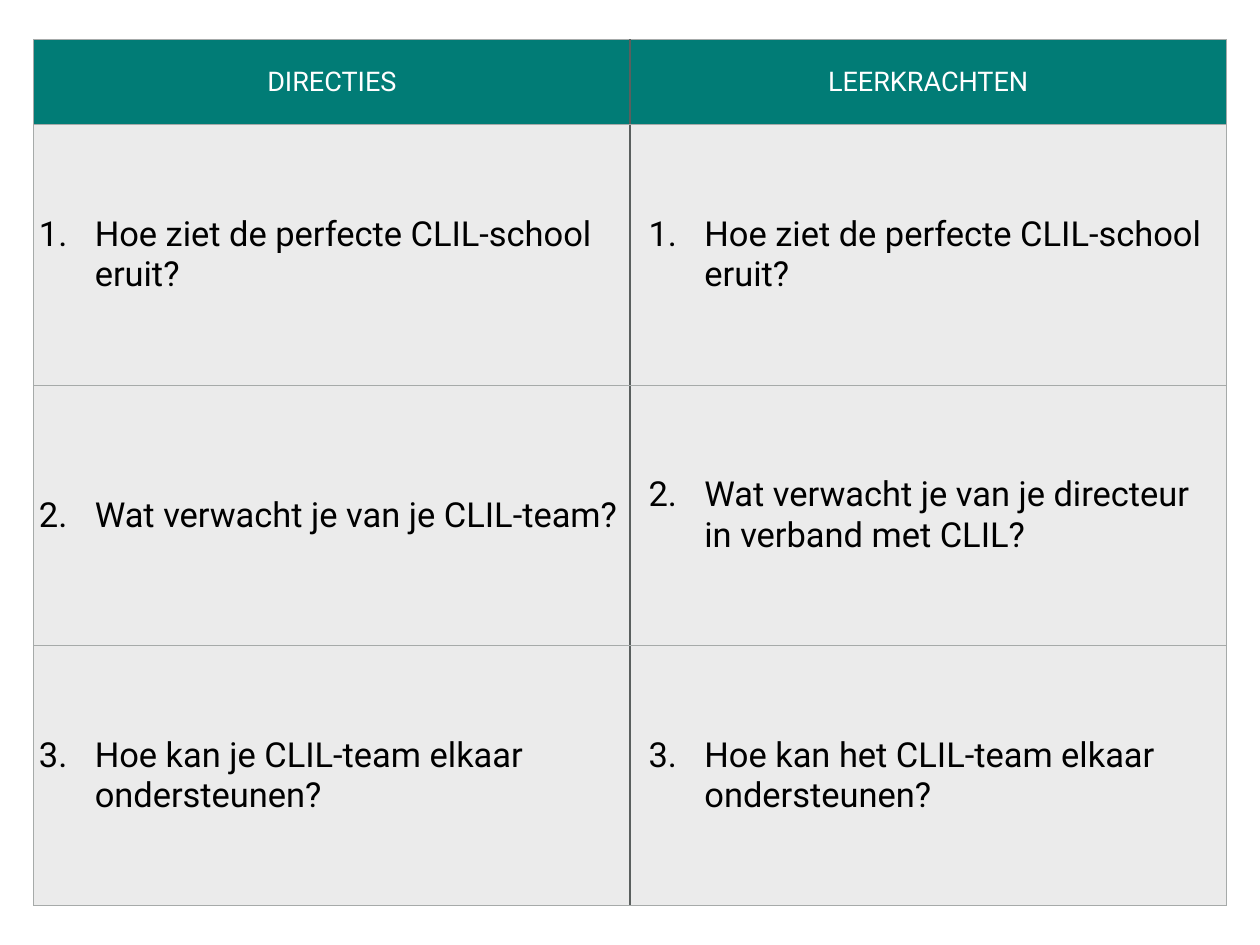
from pptx import Presentation
from pptx.dml.color import RGBColor
from pptx.enum.text import MSO_ANCHOR, PP_ALIGN
from pptx.oxml.ns import qn
from pptx.util import Inches, Pt
from lxml.etree import SubElement

# Content: one column per audience
AUDIENCES = ["DIRECTIES", "LEERKRACHTEN"]
QUESTIONS = [
    ("Hoe ziet de perfecte CLIL-school eruit?",
     "Hoe ziet de perfecte CLIL-school eruit?"),
    ("Wat verwacht je van je CLIL-team?",
     "Wat verwacht je van je directeur in verband met CLIL?"),
    ("Hoe kan je CLIL-team elkaar ondersteunen?",
     "Hoe kan het CLIL-team elkaar ondersteunen?"),
]

TEAL, PALE, WHITE, BLACK = "017C76", "EBEBEB", "FFFFFF", "000000"
EDGE, DIVIDER = "A6AAA9", "5A5F5E"
TEXT_INDENTS = [0.63, 0.78]
HANGING = 0.63


def color(hex_code):
    return RGBColor.from_string(hex_code)


def write(frame, text, size=28, ink=BLACK, align=PP_ALIGN.LEFT,
          number=None, indent=0, before=0):
    """Fill a frame with one paragraph, numbered if a number is given."""
    paragraph = frame.paragraphs[0]
    paragraph.alignment = align
    paragraph.space_before = Pt(before)
    run = paragraph.add_run()
    run.text = text
    run.font.name = "Roboto"
    run.font.size = Pt(size)
    run.font.bold = False
    run.font.color.rgb = color(ink)
    if number:
        properties = paragraph._p.get_or_add_pPr()
        properties.set("marL", str(Inches(indent)))
        properties.set("indent", str(-Inches(HANGING)))
        SubElement(properties, qn("a:buFont"), typeface="Roboto")
        SubElement(properties, qn("a:buAutoNum"), type="arabicPeriod",
                   startAt=str(number))


class QuestionSlide:
    """Holds the slide and draws its elements in one style."""

    def __init__(self, deck):
        self.slide = deck.slides.add_slide(deck.slide_layouts[6])

    def table(self, left, top, widths, heights):
        grid = self.slide.shapes.add_table(
            len(heights), len(widths), Inches(left), Inches(top),
            Inches(sum(widths)), Inches(sum(heights))).table
        grid.horz_banding = False
        for column, width in zip(grid.columns, widths):
            column.width = Inches(width)
        for row, height in zip(grid.rows, heights):
            row.height = Inches(height)
        return grid

    def borders(self, cell, **sides):
        properties = cell._tc.get_or_add_tcPr()
        for side, hex_code in sides.items():
            line = SubElement(properties, qn(f"a:ln{side}"), w=str(Pt(1)))
            fill = SubElement(line, qn("a:solidFill"))
            SubElement(fill, qn("a:srgbClr"), val=hex_code)

    def cell(self, grid, row, column, text, fill, **text_format):
        cell = grid.cell(row, column)
        cell.vertical_anchor = MSO_ANCHOR.MIDDLE
        cell.margin_left = cell.margin_right = Inches(0.06)
        cell.margin_top = cell.margin_bottom = Inches(0.06)
        # Borders precede the fill in the cell properties
        first = column == 0
        self.borders(cell, L=EDGE if first else DIVIDER,
                     R=DIVIDER if first else EDGE, T=EDGE, B=EDGE)
        cell.fill.solid()
        cell.fill.fore_color.rgb = color(fill)
        write(cell.text_frame, text, **text_format)


def main():
    deck = Presentation()
    deck.slide_width, deck.slide_height = Inches(14.22), Inches(10.67)
    page = QuestionSlide(deck)
    overview = page.table(0.38, 0.45, [6.73] * len(AUDIENCES),
                          [0.96] + [2.94] * len(QUESTIONS))

    # Header row
    for column, audience in enumerate(AUDIENCES):
        page.cell(overview, 0, column, audience, TEAL,
                  size=22, ink=WHITE, align=PP_ALIGN.CENTER)

    # Numbered questions
    for number, pair in enumerate(QUESTIONS, start=1):
        for column, question in enumerate(pair):
            page.cell(overview, number, column, question, PALE, number=number,
                      indent=TEXT_INDENTS[column], before=32)

    deck.save("out.pptx")


if __name__ == "__main__":
    main()
